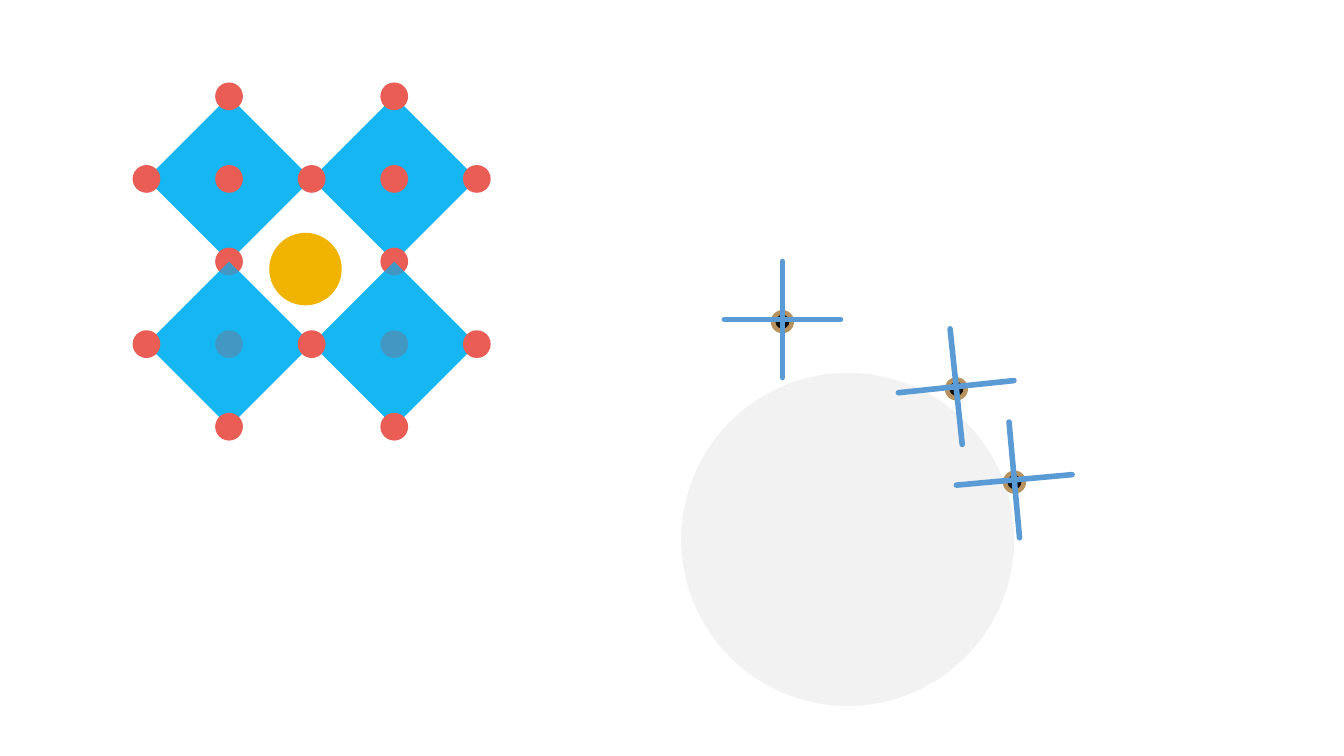
from lxml import etree
from pptx import Presentation
from pptx.dml.color import RGBColor
from pptx.enum import shapes
from pptx.oxml.ns import qn
from pptx.util import Pt

# Content: positions and sizes in points
BLUE, RED, GOLD = "00B0F0", "E95D55", "F0B400"
GREY, WHITE, TAN, BLACK, LINE = "F2F2F2", "FFFFFF", "B7925F", "0D0D0D", "5B9BD5"

FIRST_CELL, CELL, ATOM = (163.6, 127.8), 118, 19.8
CENTRE, TOP, RIGHT, BOTTOM, LEFT = (0, 0), (0, -1), (1, 0), (0, 1), (-1, 0)
# Per row: atoms behind the diamond, atoms in front of it
ROWS = [
    ([], [TOP, BOTTOM, LEFT, CENTRE]),
    ([CENTRE], [BOTTOM, LEFT]),
]
# Per column: further atoms in front; neighbours share the atom between them
COLUMNS = [[], [RIGHT]]
CATION = (218.2, 192.2, 51.8)  # centre x, centre y, diameter
DISC = (605.5, 385.3, 262)
# Crosshairs: centre x, centre y, rotation
CROSSHAIRS = [(683, 276.2, -6), (558.9, 228.2, 0), (724.5, 342.8, -5.2)]
ARM, RING, PUPIL, DOT_DROP = 41.5, 16.6, 10, 1.6


def rgb(value):
    return RGBColor.from_string(value)


def centred(parent, kind, x, y, size, fill):
    """Add a square-bounded shape around its centre."""
    s = parent.add_shape(kind, Pt(x - size / 2), Pt(y - size / 2), Pt(size), Pt(size))
    s.shadow.inherit = False
    s.fill.solid()
    s.fill.fore_color.rgb = rgb(fill)
    s.line.fill.background()
    return s


def circle(parent, x, y, size, fill):
    return centred(parent, shapes.MSO_SHAPE.OVAL, x, y, size, fill)


def diamond(parent, x, y):
    s = centred(parent, shapes.MSO_SHAPE.DIAMOND, x, y, CELL, BLUE)
    color = s.fill._xPr.find(qn("a:solidFill"))[0]
    etree.SubElement(color, qn("a:alpha")).set("val", "71000")


def arm(parent, x1, y1, x2, y2):
    c = parent.add_connector(shapes.MSO_CONNECTOR.STRAIGHT, Pt(x1), Pt(y1), Pt(x2), Pt(y2))
    c.line.color.rgb = rgb(LINE)
    c.line.width = Pt(4)
    c.line._get_or_add_ln().set("cap", "rnd")
    etree.SubElement(c._element.spPr, qn("a:effectLst"))


def atoms(parent, x, y, corners):
    for dx, dy in corners:
        circle(parent, x + dx * CELL / 2, y + dy * CELL / 2, ATOM, RED)


prs = Presentation()
prs.slide_width, prs.slide_height = Pt(960), Pt(540)
slide = prs.slides.add_slide(prs.slide_layouts[6])

# Disc
disc = circle(slide.shapes, *DISC, GREY)
disc.line.color.rgb = rgb(WHITE)
disc.line.width = Pt(24)

# Crosshairs, each a group turned about its centre
for x, y, angle in CROSSHAIRS:
    group = slide.shapes.add_group_shape()
    circle(group.shapes, x, y + DOT_DROP, RING, TAN)
    circle(group.shapes, x, y + DOT_DROP, PUPIL, BLACK)
    arm(group.shapes, x, y - ARM, x, y + ARM)
    arm(group.shapes, x + ARM, y, x - ARM, y)
    group.rotation = angle

# Crystal lattice: base diamonds, then each cell with its atoms
lattice = slide.shapes.add_group_shape().shapes
cells = [(FIRST_CELL[0] + col * CELL, FIRST_CELL[1] + row * CELL, behind, front + extra)
         for row, (behind, front) in enumerate(ROWS)
         for col, extra in enumerate(COLUMNS)]
for x, y, _, _ in cells:
    diamond(lattice, x, y)
for x, y, behind, front in cells:
    atoms(lattice, x, y, behind)
    diamond(lattice, x, y)
    atoms(lattice, x, y, front)
circle(lattice, *CATION, GOLD)

prs.save("out.pptx")
